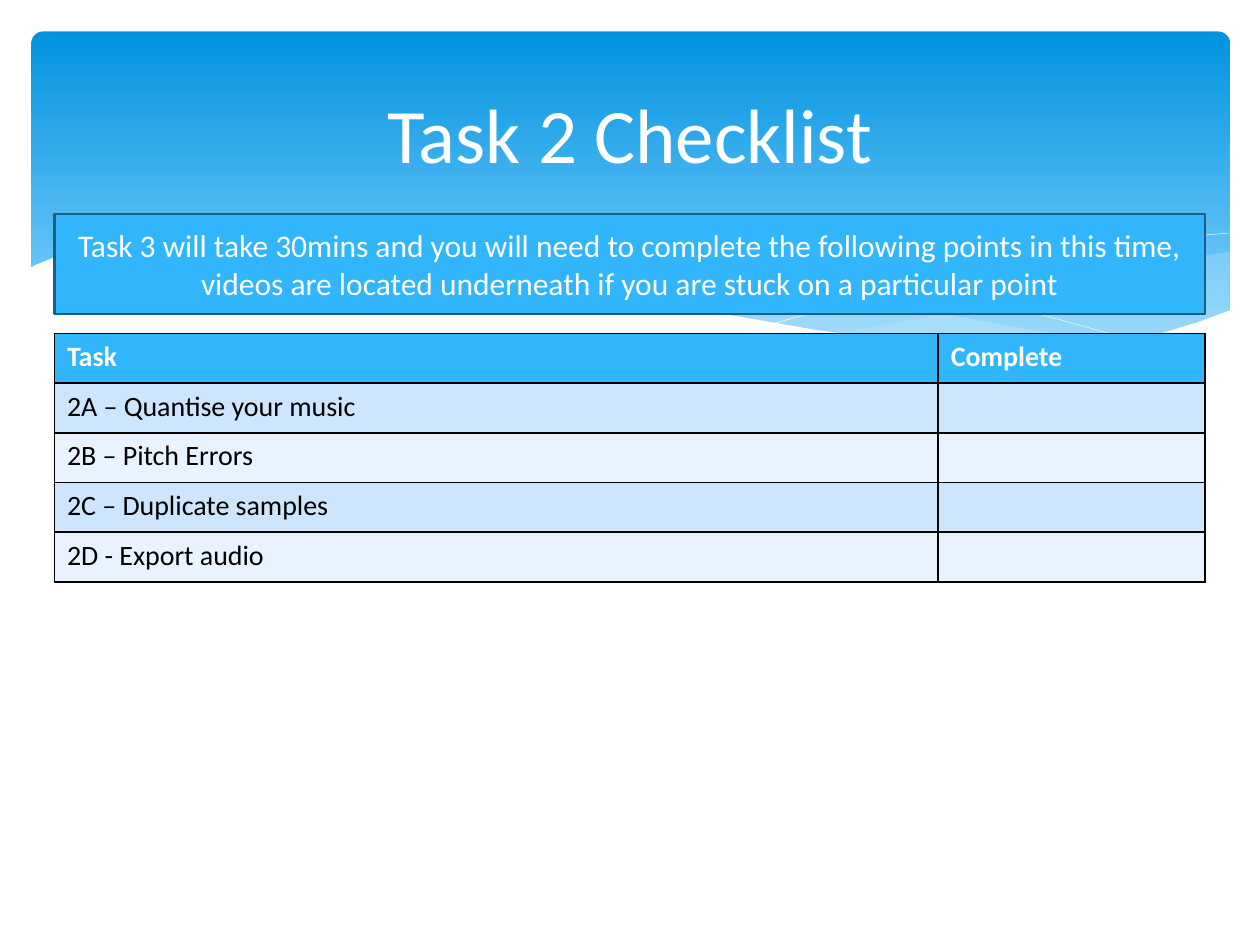
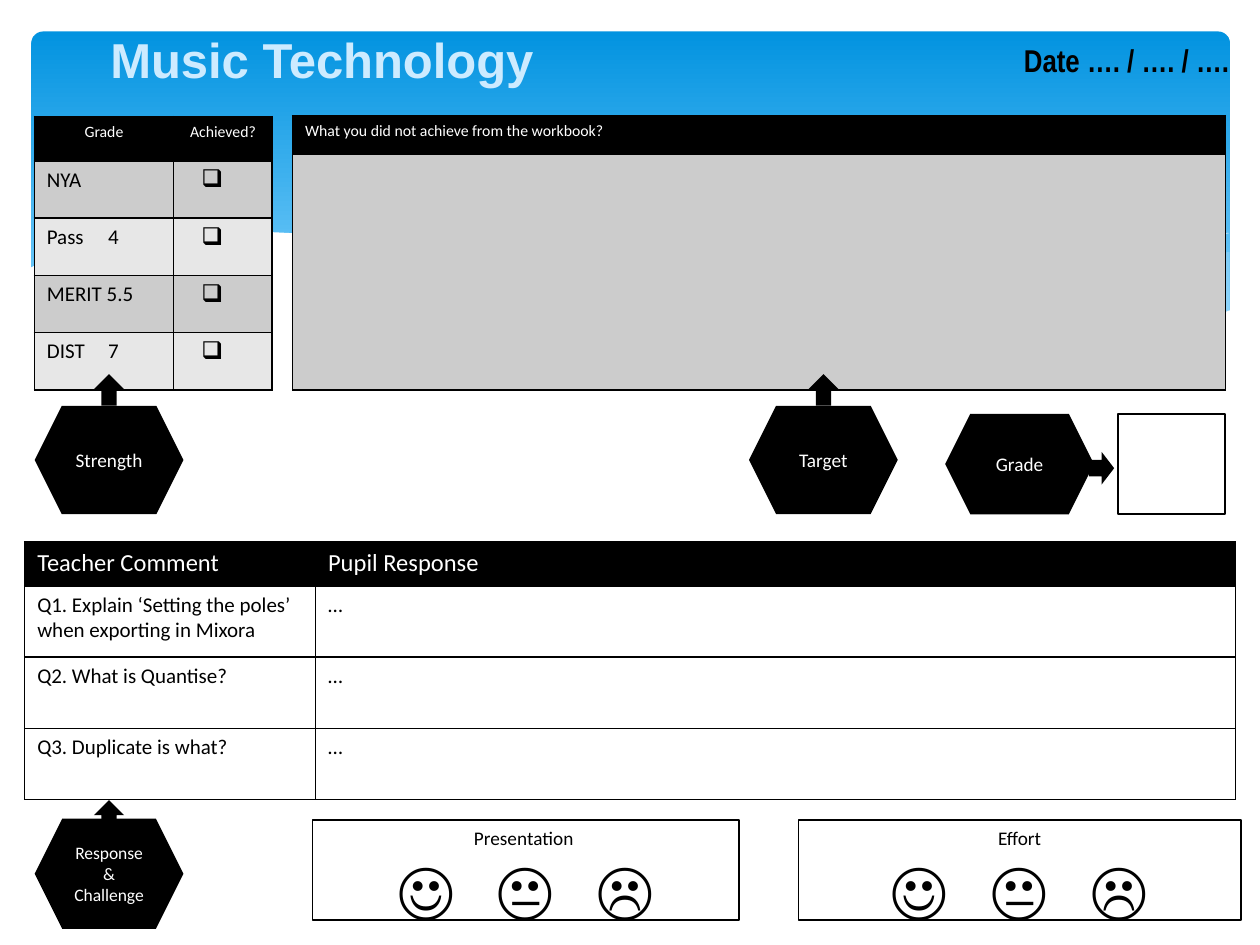
from lxml import etree
from pptx import Presentation
from pptx.dml.color import RGBColor
from pptx.enum.shapes import MSO_SHAPE
from pptx.enum.text import MSO_ANCHOR, MSO_AUTO_SIZE, PP_ALIGN
from pptx.oxml.ns import qn
from pptx.util import Pt

LEFT, CENTER, RIGHT = PP_ALIGN.LEFT, PP_ALIGN.CENTER, PP_ALIGN.RIGHT
TOP, MIDDLE = MSO_ANCHOR.TOP, MSO_ANCHOR.MIDDLE
NO_AUTOSIZE = MSO_AUTO_SIZE.NONE
RECT, ROUNDED, HEXAGON = MSO_SHAPE.RECTANGLE, MSO_SHAPE.ROUNDED_RECTANGLE, MSO_SHAPE.HEXAGON
UP_ARROW, RIGHT_ARROW = MSO_SHAPE.UP_ARROW, MSO_SHAPE.RIGHT_ARROW


class Theme:
    font, title_font, date_font = "Calibri", "Arial", "Arial Narrow"
    black, white = RGBColor(0, 0, 0), RGBColor(255, 255, 255)
    band_top, band_bottom = RGBColor(0x02, 0x93, 0xE0), RGBColor(0x83, 0xD3, 0xFE)
    wave = RGBColor(0xC6, 0xE7, 0xFC)
    accent, accent_dark = RGBColor(0x31, 0xB6, 0xFD), RGBColor(0x19, 0x5F, 0x84)
    blue_rows = RGBColor(0xCE, 0xE5, 0xFE), RGBColor(0xE8, 0xF3, 0xFF)
    gray_rows = RGBColor(0xCC, 0xCC, 0xCC), RGBColor(0xE7, 0xE7, 0xE7)
    plain_rows = None, None
    pale_title = RGBColor(0xCD, 0xEB, 0xFF)
    title, heading, face, lead, task = 44, 28, 36, 18, 16
    column_head, check, body, label, small, tiny = 14, 14, 12, 11, 10, 9


def write(frame, text, *, size, color=Theme.black, font=Theme.font, bold=False,
          align=LEFT, spacing=0, tab=0, bullet=""):
    """Add one formatted paragraph, filling the first one if it is empty."""
    first = frame.paragraphs[0]
    paragraph = frame.add_paragraph() if first.runs else first
    paragraph.alignment = align
    run = paragraph.add_run()
    run.text = text
    run.font.size, run.font.name, run.font.bold = Pt(size), font, bold
    run.font.color.rgb = color
    if spacing:
        run._r.get_or_add_rPr().set("spc", str(spacing * 100))
    layout_rules = paragraph._p.get_or_add_pPr()
    if bullet:
        etree.SubElement(layout_rules, qn("a:buChar"), char=bullet)
    if tab:
        stops = etree.SubElement(layout_rules, qn("a:tabLst"))
        etree.SubElement(stops, qn("a:tab"), pos=str(Pt(tab)), algn="l")


deck = Presentation()
deck.slide_width, deck.slide_height = Pt(720), Pt(540)
layout = deck.slide_layouts[5]
checklist = deck.slides.add_slide(layout)
review = deck.slides.add_slide(layout)

# Shared backdrop: a gradient band with waves, kept on the layout
band = checklist.shapes.add_shape(ROUNDED, Pt(18), Pt(18), Pt(684.8), Pt(194.5))
band.adjustments[0] = 0.034
band.fill.gradient()
band.fill.gradient_angle = 270
for stop, color, position in zip(band.fill.gradient_stops,
                                 (Theme.band_top, Theme.band_bottom), (0, 0.9)):
    stop.color.rgb, stop.position = color, position
band.line.fill.background()
backdrop = [band]

right_wave = [
    (702, 144), (682.6, 146.9), (663.1, 151.2), (641.5, 155.5), (619.9, 160.6),
    (579.6, 170.6), (542.2, 178.6), (508.3, 185), (475.9, 190.8), (497.5, 193.7),
    (527, 197.3), (553.7, 199.4), (578.2, 200.2), (601.2, 199.4), (627.8, 197.3),
    (651.6, 193.7), (668.2, 189.4), (683.3, 185), (702.7, 177.8), (702.7, 144)]
long_wave = [
    (643, 196.6), (602.6, 190.8), (558, 182.9), (508.3, 172.8), (452.9, 159.8),
    (420.5, 151.9), (389.5, 146.2), (361.4, 141.1), (334.8, 137.5), (302.4, 134.6),
    (273.6, 133.2), (247.7, 133.9), (225.4, 135.4), (205.9, 137.5), (246.2, 143.3),
    (275.8, 149), (323.3, 159.8), (381.6, 172.8), (432.7, 183.6), (468, 190.1),
    (500.4, 194.4), (529.9, 198), (556.6, 199.4), (589, 200.2), (617, 199.4)]
falling_line = [
    (222.5, 140.4), (247.7, 136.8), (278.6, 134.6), (311.8, 134.6), (352.1, 136.8),
    (400.3, 141.8), (457.9, 149.8), (500.4, 157.7), (547.2, 167.8), (598.3, 180.7),
    (653, 195.8)]
rising_line = [
    (441.4, 185), (470.2, 177.1), (500.4, 169.2), (538.6, 160.6), (580.3, 151.2),
    (623.5, 143.3), (655.2, 138.2), (684.7, 134.6), (702, 133.2)]
white_wave = [
    (703.4, 177.1), (684, 184.3), (662.4, 190.8), (638.6, 195.1), (612, 198),
    (582.5, 199.4), (547.9, 198), (509.8, 194.4), (466.6, 188.6), (416.9, 180),
    (362.2, 167.8), (321.8, 158.4), (281.5, 149), (244.8, 141.8), (210.2, 136.8),
    (180, 133.9), (151.9, 132.5), (127.4, 132.5), (95, 133.9), (68.4, 137.5),
    (48.2, 141.8), (33.1, 146.2), (20.9, 151.2), (16.6, 153.4), (16.6, 236.9),
    (703.4, 236.9)]

# Outline, fill (None for an open white line), opacity in percent
for outline, fill, opacity in [
        (right_wave, Theme.wave, 29), (long_wave, Theme.wave, 40),
        (falling_line, None, 100), (rising_line, None, 100),
        (white_wave, Theme.white, 100)]:
    points = [(Pt(x), Pt(y)) for x, y in outline]
    builder = checklist.shapes.build_freeform(*points[0])
    builder.add_line_segments(points[1:], close=fill is not None)
    wave = builder.convert_to_shape()
    if fill is None:
        wave.fill.background()
        wave.line.color.rgb, wave.line.width = Theme.white, Pt(0.25)
    else:
        wave.fill.solid()
        wave.fill.fore_color.rgb = fill
        wave.line.fill.background()
        if opacity < 100:
            tint = next(wave.element.iter(qn("a:srgbClr")))
            etree.SubElement(tint, qn("a:alpha"), val=str(opacity * 1000))
    backdrop.append(wave)

for depth, part in enumerate(backdrop, start=2):
    part.shadow.inherit = False
    layout.shapes.element.insert(depth, part.element)

# Titles
for slide, text, box, wrap, style in [
        (checklist, "Task 2 Checklist", (36, 26.6, 648, 98.6), True,
         dict(size=Theme.title, color=Theme.white)),
        (review, "Music Technology", (13.7, 13.2, 340.5, 41), False,
         dict(size=Theme.heading, color=Theme.pale_title, font=Theme.title_font, bold=True))]:
    title = slide.shapes.title
    title.left, title.top, title.width, title.height = map(Pt, box)
    frame = title.text_frame
    frame.auto_size, frame.word_wrap, frame.vertical_anchor = NO_AUTOSIZE, wrap, MIDDLE
    write(frame, text, align=CENTER, **style)

# Date line
date = review.shapes.add_textbox(Pt(567.7), Pt(19.8), Pt(141.8), Pt(28.8))
date.text_frame.word_wrap = True
write(date.text_frame, "Date …. / …. / ….", size=Theme.lead, font=Theme.date_font,
      bold=True, align=RIGHT)

# Tables: slide, corner, column widths, row heights, head fill and format,
# alternating row fills, body size, rows
task_rows = [("Task", "Complete"), ("2A – Quantise your music", ""), ("2B – Pitch Errors", ""),
             ("2C – Duplicate samples", ""), ("2D - Export audio", "")]
grade_rows = [("Grade", "Achieved?"), ("NYA", "❑"), ("Pass\t4", "❑"),
              ("MERIT 5.5", "❑"), ("DIST\t7", "❑")]
question_rows = [("Teacher Comment", "Pupil Response"),
                 ("Q1. Explain ‘Setting the poles’ when exporting in Mixora", "…"),
                 ("Q2. What is Quantise?", "…"), ("Q3. Duplicate is what?", "…")]
missed_rows = [("What you did not achieve from the workbook?",), ("",)]

for slide, corner, widths, heights, head_fill, head, row_fills, size, rows in [
        (checklist, (31.1, 190.6), (505, 152.6), [28.4] * 5, Theme.accent,
         dict(size=Theme.task, bold=True), Theme.blue_rows, Theme.task, task_rows),
        (review, (19.6, 66.6), (79.6, 56.4), [25.4] + [32.7] * 4, Theme.black,
         dict(size=Theme.tiny, align=CENTER), Theme.gray_rows, Theme.body, grade_rows),
        (review, (14.1, 309.6), (166.2, 525.6), [25.2] + [40.7] * 3, Theme.black,
         dict(size=Theme.column_head), Theme.plain_rows, Theme.body, question_rows),
        (review, (167.2, 66.1), (533, ), [22.3, 134.6], Theme.black,
         dict(size=Theme.tiny), Theme.gray_rows, Theme.body, missed_rows)]:
    table = slide.shapes.add_table(len(rows), len(widths), *map(Pt, corner),
                                   Pt(sum(widths)), Pt(sum(heights))).table
    table.first_row = table.horz_banding = False
    for column, width in zip(table.columns, widths):
        column.width = Pt(width)
    for r, (row, height) in enumerate(zip(rows, heights)):
        table.rows[r].height = Pt(height)
        fill = row_fills[(r - 1) % 2] if r else head_fill
        for c, text in enumerate(row):
            cell = table.cell(r, c)
            if fill is None:
                cell.fill.background()
            else:
                cell.fill.solid()
                cell.fill.fore_color.rgb = fill
            if r == 0:
                write(cell.text_frame, text, color=Theme.white, **head)
            elif text == "❑":
                write(cell.text_frame, " ", size=Theme.check, align=CENTER, bullet=text)
            else:
                write(cell.text_frame, text, size=size, tab=35 if "\t" in text else 0)
            for i, side in enumerate(("a:lnL", "a:lnR", "a:lnT", "a:lnB")):
                border = etree.Element(qn(side), w=str(Pt(1)))
                ink = etree.SubElement(border, qn("a:solidFill"))
                etree.SubElement(ink, qn("a:srgbClr"), val=str(Theme.black))
                cell._tc.get_or_add_tcPr().insert(i, border)

# Callout, hexagon labels, arrows and boxes:
# slide, outline, box, fill, line colour, line width, text, text size
callout = ("Task 3 will take 30mins and you will need to complete the following points "
           "in this time, videos are located underneath if you are stuck on a particular point")
parts = [(checklist, RECT, (31.1, 122.4, 657.6, 56.9), Theme.accent, Theme.accent_dark, 1.25,
          callout, Theme.lead),
         (review, RECT, (638.9, 236.5, 61.2, 57.4), None, Theme.black, 1.25, "", 0)]
for text, size, box in [
        ("Strength", Theme.label, (19.8, 231.9, 85, 61.9)),
        ("Target", Theme.label, (428, 231.9, 85, 61.9)),
        ("Grade", Theme.label, (540.1, 236.5, 85, 57.4)),
        ("Response & Challenge", Theme.small, (19.8, 467.8, 85, 63))]:
    parts.append((review, HEXAGON, box, Theme.black, None, 0, text, size))
for arrow, box in [(UP_ARROW, (53.7, 213.8, 17.3, 18)), (UP_ARROW, (462, 213.8, 17.3, 18)),
                   (UP_ARROW, (53.7, 457.2, 17.3, 17.3)),
                   (RIGHT_ARROW, (622.3, 258.2, 14.4, 18.7))]:
    parts.append((review, arrow, box, Theme.black, None, 0, "", 0))

for slide, outline, box, fill, line, line_width, text, size in parts:
    part = slide.shapes.add_shape(outline, *map(Pt, box))
    part.shadow.inherit = False
    if fill is None:
        part.fill.background()
    else:
        part.fill.solid()
        part.fill.fore_color.rgb = fill
    if line is None:
        part.line.fill.background()
    else:
        part.line.color.rgb, part.line.width = line, Pt(line_width)
    if text:
        part.text_frame.word_wrap, part.text_frame.vertical_anchor = True, MIDDLE
        write(part.text_frame, text, size=size, color=Theme.white, align=CENTER)

# Rating boxes with three faces
for rating, left, width in [("Presentation ", 178.6, 243.8), ("Effort", 456.3, 252.7)]:
    rating_box = review.shapes.add_shape(RECT, Pt(left), Pt(468.6), Pt(width), Pt(57.2))
    rating_box.shadow.inherit = False
    rating_box.fill.background()
    rating_box.line.color.rgb, rating_box.line.width = Theme.black, Pt(1)
    frame = rating_box.text_frame
    frame.word_wrap, frame.vertical_anchor = True, TOP
    write(frame, rating, size=Theme.label, align=CENTER)
    write(frame, "☺ 😐 ☹", size=Theme.face, align=CENTER, spacing=8)

deck.save("out.pptx")
